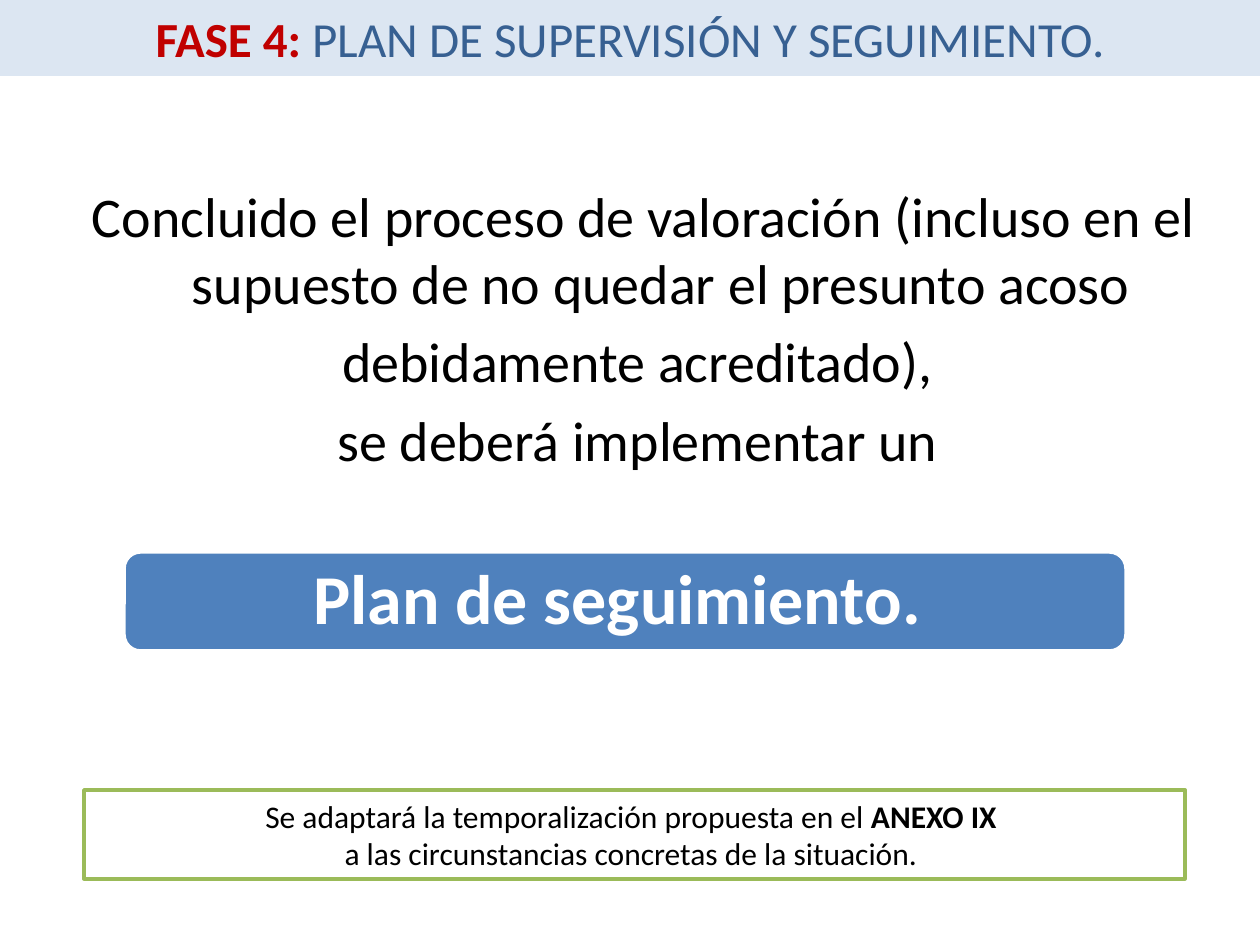
from lxml import etree
from pptx import Presentation
from pptx.dml.color import RGBColor
from pptx.enum.shapes import MSO_SHAPE
from pptx.enum.text import MSO_ANCHOR, PP_ALIGN
from pptx.oxml.ns import qn
from pptx.util import Pt

PX = 914400 / 126
FONT = "Calibri"
CENTER = PP_ALIGN.CENTER
MIDDLE = MSO_ANCHOR.MIDDLE
RECTANGLE = MSO_SHAPE.RECTANGLE
ROUNDED = MSO_SHAPE.ROUNDED_RECTANGLE


def px(value):
    return round(value * PX)


def color(value):
    return RGBColor.from_string(value)


def place(shape, box):
    shape.left, shape.top, shape.width, shape.height = map(px, box)


def paint(shape, fill, line=None):
    shape.fill.solid()
    shape.fill.fore_color.rgb = color(fill)
    if line:
        shape.line.color.rgb = color(line)
        shape.line.width = Pt(2)


def write(text_frame, paragraphs, size):
    text_frame.word_wrap = True
    text_frame.text = "\n".join("" for _ in paragraphs)
    for paragraph, runs in zip(text_frame.paragraphs, paragraphs):
        paragraph.alignment = CENTER
        for text, ink, bold in runs:
            run = paragraph.add_run()
            run.text = text
            run.font.name = FONT
            run.font.size = Pt(size)
            run.font.bold = bold
            run.font.color.rgb = color(ink)


def add_title(slide, box):
    title = slide.shapes.title
    place(title, box)
    paint(title, "DCE6F2")
    title.text_frame.vertical_anchor = MIDDLE
    write(title.text_frame, [[
        ("FASE 4: ", "C00000", True),
        ("PLAN DE SUPERVISIÓN Y SEGUIMIENTO.", "376092", False),
    ]], 28)


def add_body(slide, box):
    body = slide.placeholders[1]
    place(body, box)
    lines = [
        "Concluido el proceso de valoración (incluso en el supuesto de no quedar el presunto acoso ",
        "debidamente acreditado), ",
        "se deberá implementar un ",
    ]
    write(body.text_frame, [[(line, "000000", False)] for line in lines], 32)
    for paragraph in body.text_frame.paragraphs:
        etree.SubElement(paragraph._p.get_or_add_pPr(), qn("a:buNone"))


def add_note(slide, box):
    note = slide.shapes.add_shape(RECTANGLE, *map(px, box))
    note.shadow.inherit = False
    paint(note, "FFFFFF", "9BBB59")
    write(note.text_frame, [
        [("Se adaptará la temporalización propuesta en el ", "000000", False),
         ("ANEXO IX ", "000000", True)],
        [("a las circunstancias concretas de la situación. ", "000000", False)],
    ], 18)


def add_plan(slide, box):
    left, top, width, height = box
    inset = 5
    group = slide.shapes.add_group_shape()
    banner = group.shapes.add_shape(ROUNDED, *map(px, box))
    banner.shadow.inherit = False
    paint(banner, "4F81BD", "FFFFFF")
    label = group.shapes.add_textbox(
        px(left + inset), px(top + inset), px(width - 2 * inset), px(height - 2 * inset))
    text_frame = label.text_frame
    text_frame.vertical_anchor = MIDDLE
    text_frame.margin_left = text_frame.margin_right = px(21)
    text_frame.margin_top = text_frame.margin_bottom = px(21)
    write(text_frame, [[("Plan de seguimiento. ", "FFFFFF", True)]], 40)
    text_frame.paragraphs[0].line_spacing = 0.9


def main():
    presentation = Presentation()
    presentation.slide_width = px(1260)
    presentation.slide_height = px(945)
    slide = presentation.slides.add_slide(presentation.slide_layouts[1])
    add_title(slide, (0, 0, 1260, 76))
    add_body(slide, (63, 175, 1162, 318))
    add_note(slide, (84, 790, 1101, 89))
    add_plan(slide, (124, 552, 1002, 99))
    presentation.save("out.pptx")


if __name__ == "__main__":
    main()
